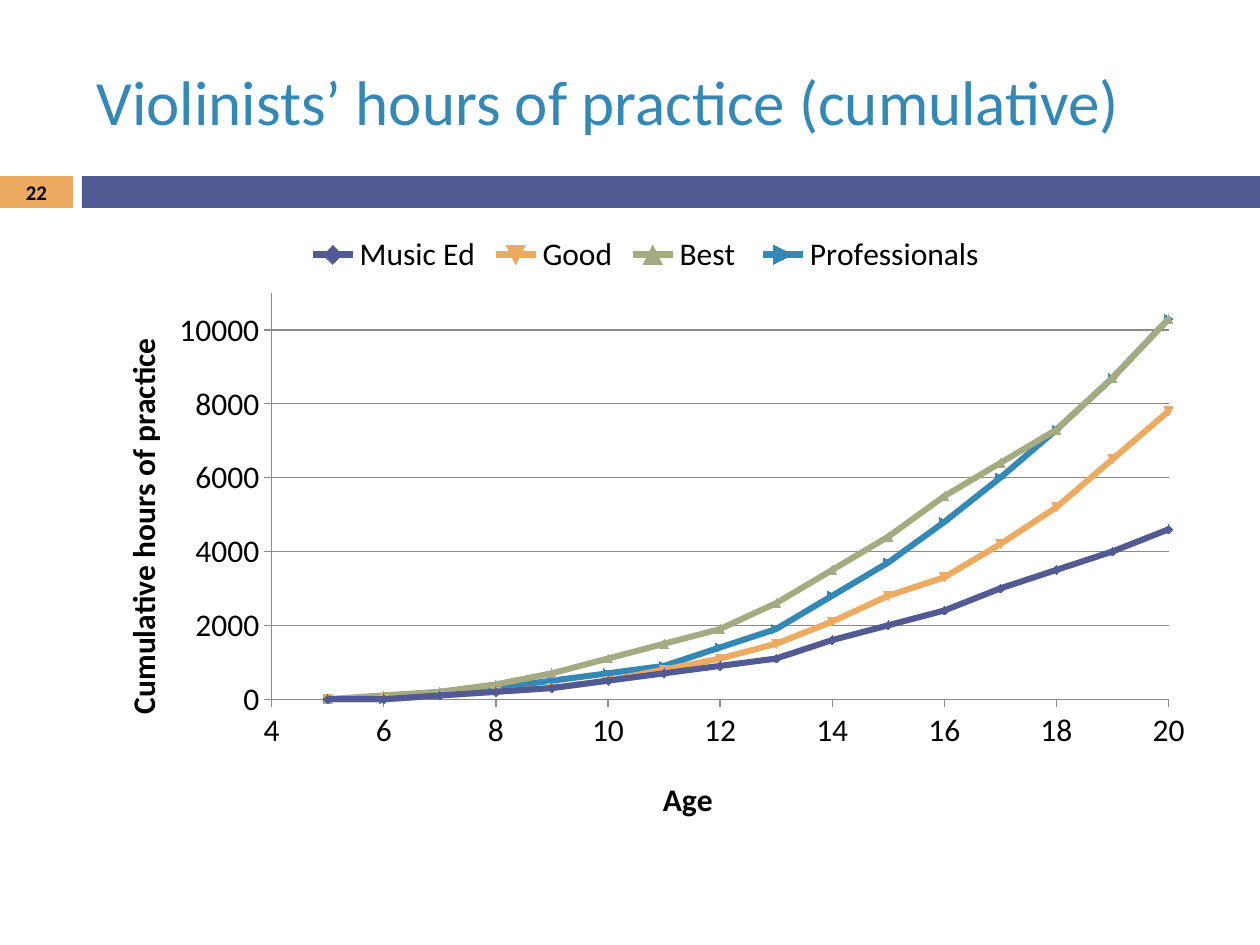
from lxml import etree
from pptx import Presentation
from pptx.chart.data import XyChartData
from pptx.dml.color import RGBColor
from pptx.enum.chart import XL_CHART_TYPE as ChartType, XL_LEGEND_POSITION as LegendPosition
from pptx.enum.chart import XL_TICK_MARK as TickMark
from pptx.enum.shapes import MSO_SHAPE as Shape
from pptx.enum.text import MSO_ANCHOR as Anchor, PP_ALIGN as Align
from pptx.oxml.ns import qn
from pptx.util import Emu, Pt

PX = 914400 // 126
FONT = "Calibri"
INK, GRID = "000000", "8B8B8B"
INDIGO, ORANGE, SAGE, BLUE = "525A93", "EDAA61", "A5AB81", "3488B6"

CHART_BOX = (84, 220, 1124, 620)
AGES = range(5, 21)
SERIES = [
    ("Music Ed", INDIGO, [0, 0, 100, 200, 300, 500, 700, 900, 1100, 1600,
                          2000, 2400, 3000, 3500, 4000, 4600]),
    ("Good", ORANGE, [0, 0, 100, 200, 300, 500, 800, 1100, 1500, 2100,
                      2800, 3300, 4200, 5200, 6500, 7800]),
    ("Best ", SAGE, [0, 100, 200, 400, 700, 1100, 1500, 1900, 2600, 3500,
                     4400, 5500, 6400, 7300, 8700, 10300]),
    ("Professionals", BLUE, [0, 0, 100, 300, 500, 700, 900, 1400, 1900, 2800,
                             3700, 4800, 6000, 7300, 8700, 10300]),
]


def px(*lengths):
    return [Emu(length * PX) for length in lengths]


def color(hex_code):
    return RGBColor.from_string(hex_code)


def set_all(target, **values):
    for name, value in values.items():
        setattr(target, name, value)


def style_font(font, size, hex_code=INK, bold=False):
    set_all(font, name=FONT, size=Pt(size), bold=bold)
    font.color.rgb = color(hex_code)


def write(box, text, size, hex_code, bold=False, align=Align.LEFT):
    frame = box.text_frame
    set_all(frame, word_wrap=True, vertical_anchor=Anchor.MIDDLE)
    para = frame.paragraphs[0]
    para.alignment = align
    span = para.add_run()
    span.text = text
    style_font(span.font, size, hex_code, bold)


def add_bar(page, box, hex_code):
    bar = page.shapes.add_shape(Shape.RECTANGLE, *px(*box))
    bar.shadow.inherit = False
    bar.fill.solid()
    bar.fill.fore_color.rgb = color(hex_code)
    bar.line.fill.background()


def add_title(page, text):
    title = page.shapes.title
    set_all(title, **dict(zip(("left", "top", "width", "height"), px(84, 32, 1124, 136))))
    write(title, text, 36, BLUE)


def add_page_number(page, text):
    box = page.shapes.add_textbox(*px(0, 175, 73, 34))
    frame = box.text_frame
    set_all(frame, margin_left=0, margin_right=0, margin_top=0, margin_bottom=0)
    write(box, text, 11.9, INK, True, Align.CENTER)


def place(parent, before, left, top, width=None, height=None):
    """Fix a chart part at a slide position; a size marks the inner plot area."""
    for old in parent.findall(qn("c:layout")):
        parent.remove(old)
    layout = etree.Element(qn("c:layout"))
    manual = etree.SubElement(layout, qn("c:manualLayout"))
    chart_left, chart_top, chart_width, chart_height = CHART_BOX
    values = {"xMode": "edge", "yMode": "edge",
              "x": round((left - chart_left) / chart_width, 3),
              "y": round((top - chart_top) / chart_height, 3)}
    if width:
        values = {"layoutTarget": "inner", **values,
                  "w": round(width / chart_width, 3), "h": round(height / chart_height, 3)}
    for name, value in values.items():
        etree.SubElement(manual, qn(f"c:{name}")).set("val", str(value))
    parent.find(qn(before)).addprevious(layout)


def style_axis(axis, title, title_at, low, high, step, grid):
    set_all(axis, minimum_scale=low, maximum_scale=high, major_unit=step,
            has_major_gridlines=grid, major_tick_mark=TickMark.OUTSIDE,
            minor_tick_mark=TickMark.NONE)
    style_font(axis.tick_labels.font, 18)
    set_all(axis.tick_labels, number_format="General", number_format_is_linked=False)
    lines = [axis.format.line]
    if grid:
        lines.append(axis.major_gridlines.format.line)
    for line in lines:
        line.color.rgb = color(GRID)
        line.width = Pt(0.75)
    para = axis.axis_title.text_frame.paragraphs[0]
    span = para.add_run()
    span.text = title
    style_font(span.font, 18, bold=True)
    place(axis.axis_title._element, "c:overlay", *title_at)


def style_series(series, hex_code, index):
    series.smooth = False
    series.format.line.color.rgb = color(hex_code)
    series.format.line.width = Pt(3.5)
    series.marker.format.fill.solid()
    series.marker.format.fill.fore_color.rgb = color(hex_code)
    series.marker.format.line.color.rgb = color(hex_code)
    # Automatic marker shapes follow the index, starting at the diamond
    series._element.find(qn("c:idx")).set("val", str(index))


def add_practice_chart(page):
    data = XyChartData()
    for name, _, hours in SERIES:
        series = data.add_series(name)
        for age, total in zip(AGES, hours):
            series.add_data_point(age, total)
    chart = page.shapes.add_chart(ChartType.XY_SCATTER_LINES, *px(*CHART_BOX), data).chart
    set_all(chart, has_title=False, has_legend=True)
    style_font(chart.font, 10)
    chart.plots[0].vary_by_categories = False

    # Legend
    set_all(chart.legend, position=LegendPosition.TOP, include_in_layout=False)
    style_font(chart.legend.font, 18)

    # Axes and plot area
    style_axis(chart.category_axis, "Age", (657, 772), 4, 20, 2, False)
    style_axis(chart.value_axis, "Cumulative hours of practice", (115, 333),
               0, 11000, 2000, True)
    place(chart._chartSpace.chart.plotArea, "c:scatterChart", 272, 293, 897, 406)

    # Lines
    for index, (series, (_, hex_code, _)) in enumerate(zip(chart.plots[0].series, SERIES), 1):
        style_series(series, hex_code, index)


def main():
    deck = Presentation()
    set_all(deck, slide_width=Emu(1260 * PX), slide_height=Emu(945 * PX))
    page = deck.slides.add_slide(deck.slide_layouts[5])

    # Band under the title
    add_bar(page, (0, 176, 73, 32), ORANGE)
    add_bar(page, (82, 176, 1178, 32), INDIGO)

    # Title, page number and chart
    add_title(page, "Violinists’ hours of practice (cumulative)")
    add_page_number(page, "22")
    add_practice_chart(page)
    deck.save("out.pptx")


if __name__ == "__main__":
    main()
